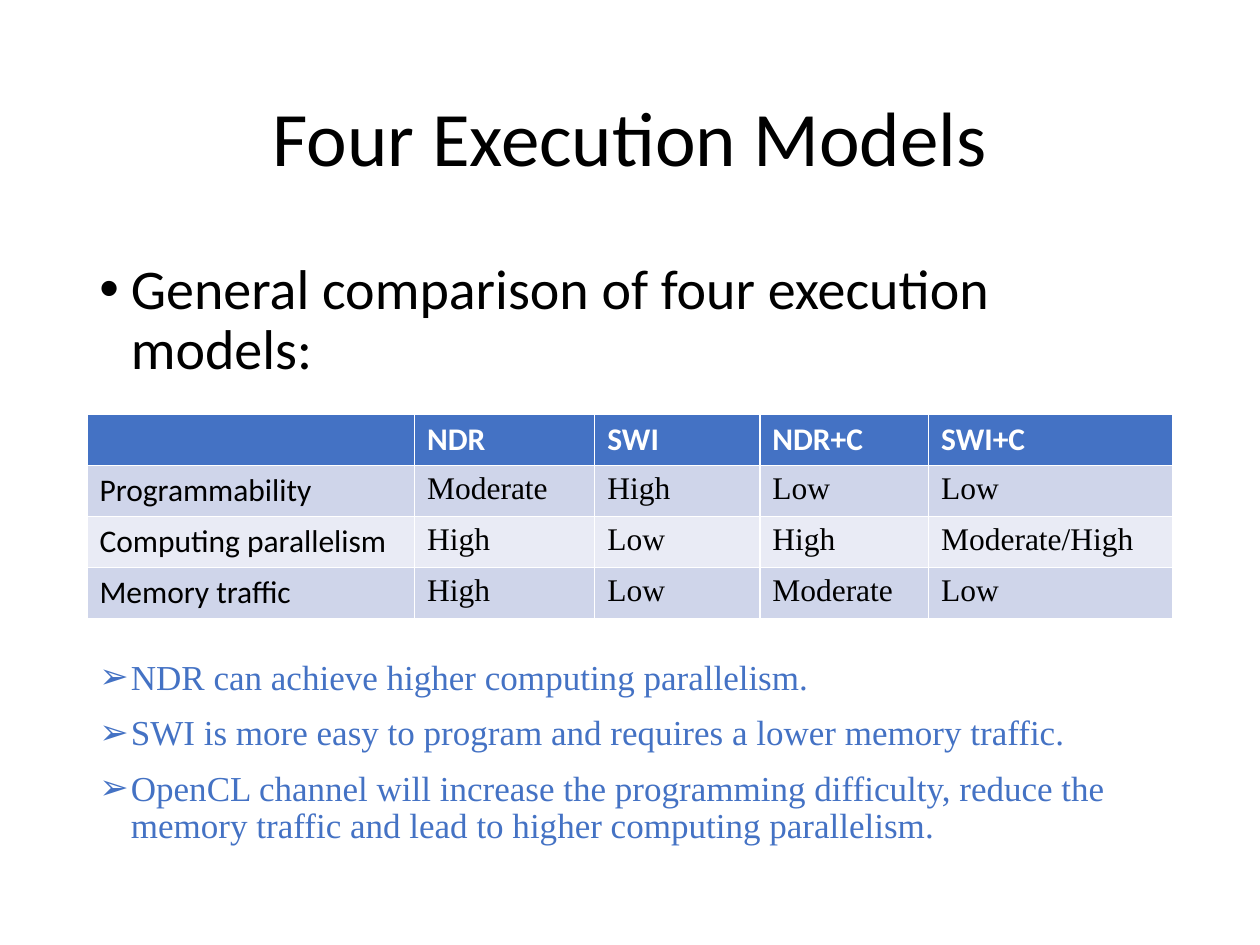
from lxml import etree
from pptx import Presentation
from pptx.dml import color
from pptx.enum import text
from pptx.oxml import ns
from pptx.util import Inches, Pt


def add_words(paragraph, words, size, font, hue, bold=False):
    run = paragraph.add_run()
    run.text = words
    run.font.size = Pt(size)
    run.font.name = font
    run.font.bold = bold
    run.font.color.rgb = color.RGBColor.from_string(hue)


def add_bullets(top, height, lines, bullet, size, font, hue):
    frame = slide.shapes.add_textbox(Inches(0.69), Inches(top), Inches(8.62), Inches(height)).text_frame
    frame.word_wrap = True
    for index, line in enumerate(lines):
        paragraph = frame.add_paragraph() if index else frame.paragraphs[0]
        paragraph.line_spacing = 0.9
        paragraph.space_before = Pt(10)
        properties = paragraph._p.get_or_add_pPr()
        properties.set("marL", str(Inches(0.25)))
        properties.set("indent", str(-Inches(0.25)))
        etree.SubElement(properties, ns.qn("a:buFont")).set("typeface", "Arial")
        etree.SubElement(properties, ns.qn("a:buChar")).set("char", bullet)
        add_words(paragraph, line, size, font, hue)


prs = Presentation()
prs.slide_width = Inches(10)
prs.slide_height = Inches(7.5)
slide = prs.slides.add_slide(prs.slide_layouts[6])

title = slide.shapes.add_textbox(Inches(0.69), Inches(0.4), Inches(8.62), Inches(1.45)).text_frame
title.word_wrap = True
title.vertical_anchor = text.MSO_ANCHOR.MIDDLE
heading = title.paragraphs[0]
heading.alignment = text.PP_ALIGN.CENTER
heading.line_spacing = 0.9
add_words(heading, "Four Execution Models", 44, "Calibri", "000000")

comparison = [
    ["", "NDR", "SWI", "NDR+C", "SWI+C"],
    ["Programmability", "Moderate", "High", "Low", "Low"],
    ["Computing parallelism", "High", "Low", "High", "Moderate/High"],
    ["Memory traffic", "High", "Low", "Moderate", "Low"],
]
row_fills = ["4472C4", "CFD5EA", "E9EBF5", "CFD5EA"]
column_widths = [2.6, 1.43, 1.31, 1.34, 1.94]
models = slide.shapes.add_table(4, 5, Inches(0.69), Inches(3.29), Inches(8.62), Inches(1.62)).table
for column, width in zip(models.columns, column_widths):
    column.width = Inches(width)
for row, (ratings, row_fill) in enumerate(zip(comparison, row_fills)):
    for col, rating in enumerate(ratings):
        cell = models.cell(row, col)
        cell.fill.solid()
        cell.fill.fore_color.rgb = color.RGBColor.from_string(row_fill)
        if rating:
            font = "Times New Roman" if row and col else "Calibri"
            hue = "000000" if row else "FFFFFF"
            add_words(cell.text_frame.paragraphs[0], rating, 18, font, hue, row == 0)

add_bullets(2.02, 4.76, ["General comparison of four execution models:"], "•", 32, "Calibri", "000000")
findings = [
    "NDR can achieve higher computing parallelism.",
    "SWI is more easy to program and requires a lower memory traffic.",
    "OpenCL channel will increase the programming difficulty, reduce the memory traffic "
    "and lead to higher computing parallelism.",
]
add_bullets(5.19, 1.59, findings, "➢", 20, "Times New Roman", "4472C4")

prs.save("out.pptx")
